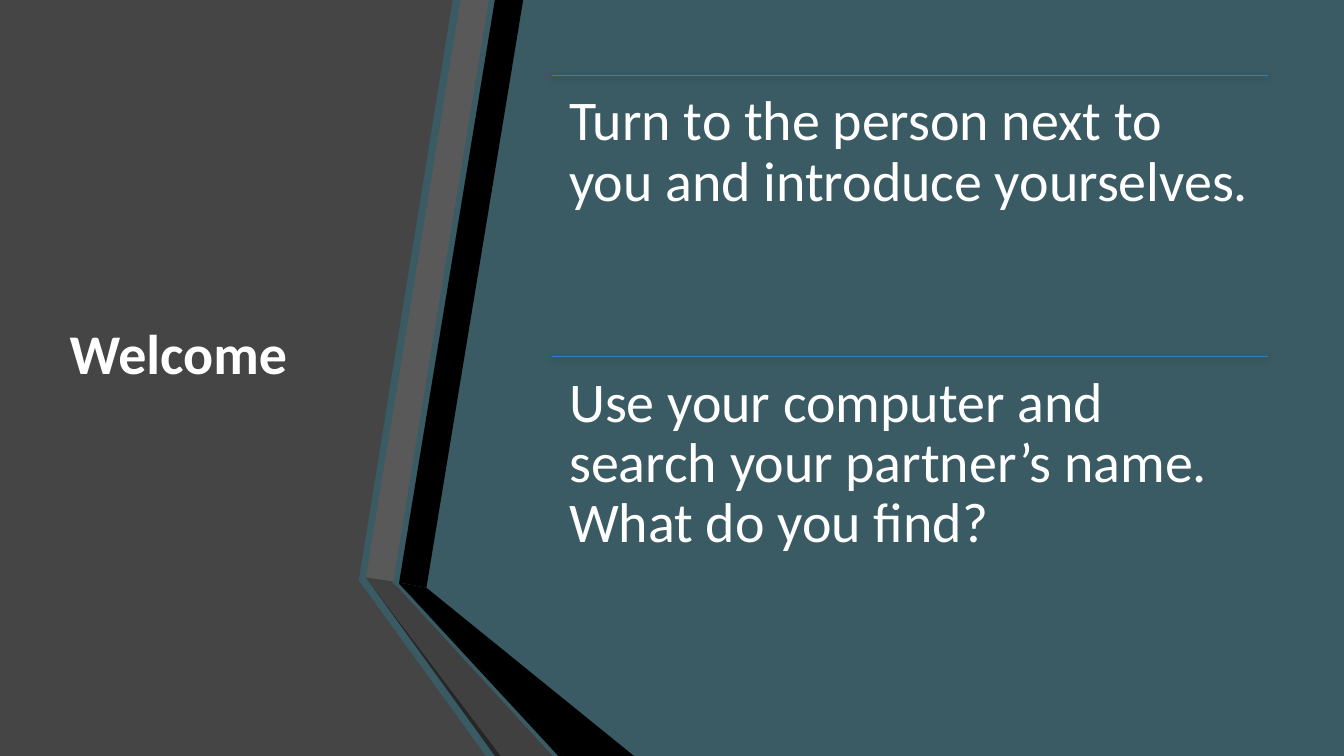
from lxml.etree import SubElement
from pptx import Presentation
from pptx.dml.color import RGBColor
from pptx.enum.shapes import MSO_CONNECTOR
from pptx.enum.text import MSO_ANCHOR, MSO_AUTO_SIZE, PP_ALIGN
from pptx.oxml.ns import qn
from pptx.util import Pt

COLORS = {
    "background": "3A5B63",
    "panel": "454545",
    "black": "000000",
    "band": "595959",
    "edge": "262626",
    "fold": "404040",
    "rule": "2683C6",
    "text": "FFFFFF",
}

FACETS = [
    ("panel", [(0, 0), (323.3, 0), (256.3, 414), (256.3, 414.7), (347, 540), (0, 540)]),
    ("black", [(285.1, 416.2), (304.6, 419.8), (373.7, 0), (353.5, 0)]),
    ("band", [(349.2, 0), (329, 0), (261.4, 412.6), (280.8, 415.4)]),
    ("edge", [(261.4, 412.6), (353.5, 540), (357.8, 540)]),
    ("black", [(285.1, 416.9), (398.9, 540), (403.2, 540)]),
    ("black", [(285.1, 416.9), (403.2, 540), (452.9, 540), (304.6, 419.8), (285.1, 416.2)]),
    ("fold", [(394.6, 540), (284.4, 419.8), (280.1, 416.2), (280.8, 415.4),
              (261.4, 412.6), (357.8, 540)]),
]

TASKS = [
    "Turn to the person next to you and introduce yourselves.",
    "Use your computer and search your partner’s name. What do you find?",
]
TASK_LEFT, TASK_TOP, TASK_WIDTH, TASK_HEIGHT = 394.6, 54, 511.2, 200.9


def color(name):
    return RGBColor.from_string(COLORS[name])


def add_facet(page, fill, points):
    corners = [(Pt(x), Pt(y)) for x, y in points]
    builder = page.shapes.build_freeform(*corners[0], scale=1.0)
    builder.add_line_segments(corners[1:], close=True)
    facet = builder.convert_to_shape()
    facet.shadow.inherit = False
    facet.fill.solid()
    facet.fill.fore_color.rgb = color(fill)
    facet.line.fill.background()


def write_text(box, text, inset, anchor, bold=False):
    frame = box.text_frame
    frame.text = text
    frame.word_wrap = True
    frame.auto_size = MSO_AUTO_SIZE.NONE
    frame.vertical_anchor = anchor
    frame.margin_left = frame.margin_right = Pt(inset)
    frame.margin_top = frame.margin_bottom = Pt(inset)
    para = frame.paragraphs[0]
    para.alignment = PP_ALIGN.LEFT
    para.line_spacing = 0.9
    font = para.runs[0].font
    font.name = "Calibri"
    font.size = Pt(40)
    font.bold = bold
    font.color.rgb = color("text")


def add_title(page, text):
    """Fill the title placeholder and bring it in front of the shapes drawn so far."""
    title = page.shapes.title
    title.left, title.top = Pt(42.5), Pt(54)
    title.width, title.height = Pt(218.9), Pt(401.8)
    write_text(title, text, 7.2, MSO_ANCHOR.MIDDLE, bold=True)
    page.shapes.element.append(title.element)


def add_rule(page, top):
    rule = page.shapes.add_connector(
        MSO_CONNECTOR.STRAIGHT, Pt(TASK_LEFT), Pt(top), Pt(TASK_LEFT + TASK_WIDTH), Pt(top))
    rule.line.color.rgb = color("rule")
    rule.line.width = Pt(0.5)
    effects = SubElement(rule.element.spPr, qn("a:effectLst"))
    shadow = SubElement(effects, qn("a:outerShdw"), blurRad=str(Pt(4.5)),
                        dist=str(Pt(1.5)), dir="5400000", rotWithShape="0")
    shade = SubElement(shadow, qn("a:srgbClr"), val=COLORS["black"])
    SubElement(shade, qn("a:alpha"), val="63000")


def add_task(page, top, text):
    add_rule(page, top)
    box = page.shapes.add_textbox(Pt(TASK_LEFT), Pt(top), Pt(TASK_WIDTH), Pt(TASK_HEIGHT))
    write_text(box, text, 12, MSO_ANCHOR.TOP)


def main():
    deck = Presentation()
    deck.slide_width, deck.slide_height = Pt(960), Pt(540)
    page = deck.slides.add_slide(deck.slide_layouts[5])
    page.background.fill.solid()
    page.background.fill.fore_color.rgb = color("background")
    for fill, points in FACETS:
        add_facet(page, fill, points)
    add_title(page, "Welcome")
    for index, text in enumerate(TASKS):
        add_task(page, TASK_TOP + index * TASK_HEIGHT, text)
    deck.save("out.pptx")


if __name__ == "__main__":
    main()
